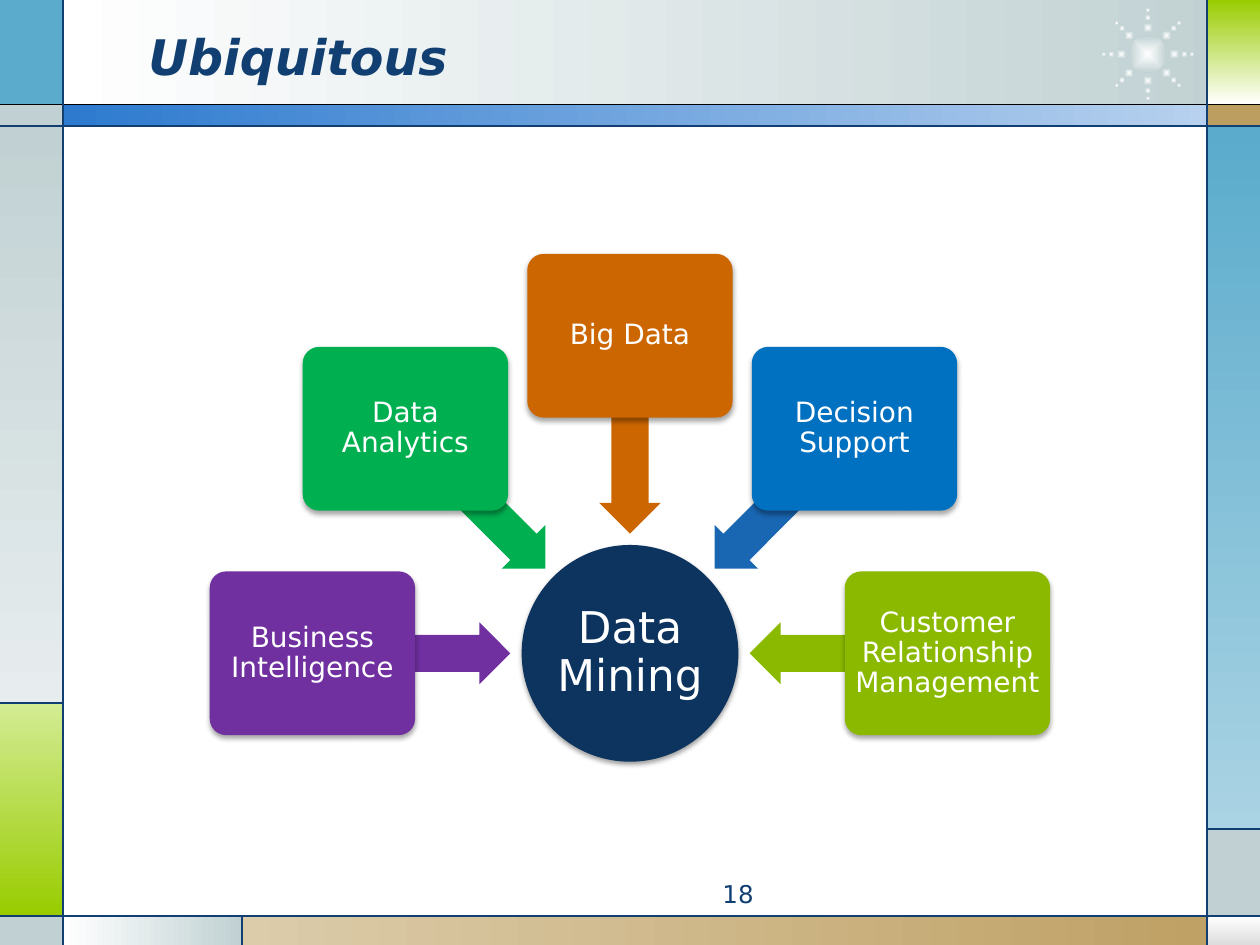
from dataclasses import dataclass
from itertools import product
from math import cos, radians, sin

from lxml import etree
from pptx import Presentation
from pptx.dml.color import RGBColor
from pptx.enum import shapes, text
from pptx.oxml import ns
from pptx.util import Inches, Pt

COLUMNS, ROWS = 100, 75
FONT = "DejaVu Sans"
NAVY, WHITE, MIST = "113F71", "FFFFFF", "C1D1D3"
SKY, LIME, SAND = "5AABCC", "99CC00", "BD9E61"
ACROSS, DOWN, RADIAL = 0, 90, None
KIND = shapes.MSO_SHAPE

deck = Presentation()
deck.slide_width, deck.slide_height = Inches(10), Inches(7.5)
page = deck.slides.add_slide(deck.slide_layouts[6])


@dataclass(frozen=True)
class Gradient:
    start: str
    end: str
    angle: int | None


@dataclass(frozen=True)
class Area:
    left: float
    top: float
    width: float
    height: float


@dataclass(frozen=True)
class Panel:
    area: Area
    fill: str | Gradient


@dataclass(frozen=True)
class Rule:
    start: tuple[float, float]
    end: tuple[float, float]
    color: str = NAVY


@dataclass(frozen=True)
class Topic:
    label: str
    fill: str
    arrow_fill: str


def across(columns: float) -> int:
    return round(deck.slide_width * columns / COLUMNS)


def down(rows: float) -> int:
    return round(deck.slide_height * rows / ROWS)


def color(value: str) -> RGBColor:
    return RGBColor.from_string(value)


def centred(x: float, y: float, width: float, height: float) -> Area:
    return Area(x - width / 2, y - height / 2, width, height)


def child(parent, tag: str, **attributes):
    values = {name: str(value) for name, value in attributes.items()}
    return etree.SubElement(parent, ns.qn(tag), values)


def apply_gradient(shape, gradient: Gradient) -> None:
    shape.fill.background()
    blank = shape._element.spPr.find(ns.qn("a:noFill"))
    fill = etree.Element(ns.qn("a:gradFill"), rotWithShape="1")
    stops = child(fill, "a:gsLst")
    for position, value in ((0, gradient.start), (100000, gradient.end)):
        child(child(stops, "a:gs", pos=position), "a:srgbClr", val=value)
    if gradient.angle is RADIAL:
        target = child(fill, "a:path", path="shape")
        child(target, "a:fillToRect", l=50000, t=50000, r=50000, b=50000)
    else:
        child(fill, "a:lin", ang=gradient.angle * 60000, scaled=0)
    blank.getparent().replace(blank, fill)


def add_figure(kind: KIND, area: Area, fill: str | Gradient):
    shape = page.shapes.add_shape(kind, across(area.left), down(area.top),
                                  across(area.width), down(area.height))
    shape.shadow.inherit = False
    shape.line.fill.background()
    if isinstance(fill, Gradient):
        apply_gradient(shape, fill)
    else:
        shape.fill.solid()
        shape.fill.fore_color.rgb = color(fill)
    return shape


def add_shadow(shape, opacity: int, distance: float) -> None:
    effects = shape._element.spPr.find(ns.qn("a:effectLst"))
    shadow = child(effects, "a:outerShdw", blurRad=Pt(3.1), dist=Pt(distance),
                   dir=90 * 60000, rotWithShape=0)
    child(child(shadow, "a:srgbClr", val="000000"), "a:alpha", val=opacity * 1000)


def write(box, words: str, size: int, ink: str, align: text.PP_ALIGN):
    box.text_frame.word_wrap = True
    para = box.text_frame.paragraphs[0]
    para.text = words
    para.alignment = align
    para.font.name, para.font.size = FONT, Pt(size)
    para.font.color.rgb = color(ink)
    return para


def add_text(area: Area, words: str, size: int, align: text.PP_ALIGN):
    box = page.shapes.add_textbox(across(area.left), down(area.top),
                                  across(area.width), down(area.height))
    return box, write(box, words, size, NAVY, align)


def add_label(shape, words: str, size: int, inset: float) -> None:
    frame = shape.text_frame
    frame.margin_left = frame.margin_right = across(inset)
    frame.margin_top = frame.margin_bottom = down(inset)
    frame.vertical_anchor = text.MSO_ANCHOR.MIDDLE
    write(shape, words, size, WHITE, text.PP_ALIGN.CENTER).line_spacing = 0.9


def add_rule(rule: Rule) -> None:
    line = page.shapes.add_connector(
        shapes.MSO_CONNECTOR.STRAIGHT, across(rule.start[0]), down(rule.start[1]),
        across(rule.end[0]), down(rule.end[1]))
    line.line.color.rgb = color(rule.color)
    line.line.width = Pt(0.75)
    child(line._element.spPr, "a:effectLst")


def add_star(x: float, y: float) -> None:
    glow = Gradient(WHITE, MIST, RADIAL)
    add_figure(KIND.OVAL, centred(x, y, 3, 3), glow)
    dots = ((2.1, 0.75), (2.9, 0.5), (3.5, 0.35))
    for angle, (reach, size) in product(range(0, 360, 45), dots):
        turn = radians(angle)
        spot = centred(x + reach * cos(turn), y + reach * sin(turn), size, size)
        add_figure(KIND.OVAL, spot, glow)


def add_topic(topic: Topic, angle: int, x: float, y: float) -> None:
    dx, dy = cos(radians(angle)), sin(radians(angle))
    arrow = add_figure(KIND.LEFT_ARROW,
                       centred(x + 17.35 * dx, y + 17.35 * dy, 15.7, 4.9),
                       topic.arrow_fill)
    arrow.adjustments[0], arrow.adjustments[1] = 0.6, 0.5
    arrow.rotation = angle % 360
    card = add_figure(KIND.ROUNDED_RECTANGLE,
                      centred(x + 25.2 * dx, y + 25.2 * dy, 16.3, 13), topic.fill)
    card.adjustments[0] = 0.1
    add_shadow(card, 35, 1.8)
    add_label(card, topic.label, 16, 0.3)


PANELS = (
    Panel(Area(5, 0, 92.7, 8.4), Gradient(WHITE, MIST, ACROSS)),
    Panel(Area(0, 0, 5, 8.3), SKY),
    Panel(Area(0, 8.3, 5, 1.7), MIST),
    Panel(Area(0, 10, 5, 45.8), Gradient(MIST, "E7EDEE", DOWN)),
    Panel(Area(0, 55.8, 5, 16.9), Gradient("D3EC94", LIME, DOWN)),
    Panel(Area(0, 72.7, 5, 2.3), MIST),
    Panel(Area(5, 72.7, 14.2, 2.3), Gradient(WHITE, MIST, ACROSS)),
    Panel(Area(19.2, 72.7, 80.8, 2.3), Gradient("DCCCAA", SAND, ACROSS)),
    Panel(Area(95.9, 72.7, 4.1, 2.3), Gradient(WHITE, "DDDDDD", DOWN)),
    Panel(Area(95.8, 65.8, 4.2, 6.9), MIST),
    Panel(Area(95.8, 10, 4.2, 55.8), Gradient(SKY, "AAD3E4", DOWN)),
    Panel(Area(95.8, 8.3, 4.2, 1.7), SAND),
    Panel(Area(95.8, 0, 4.2, 8.3), Gradient(LIME, WHITE, DOWN)),
    Panel(Area(5, 8.3, 90.8, 1.7), Gradient("2D7ACF", "B7D1EE", ACROSS)),
)

RULES = (
    Rule((0, 8.3), (COLUMNS, 8.3), "000000"),
    Rule((0, 10), (COLUMNS, 10)),
    Rule((0, 72.7), (COLUMNS, 72.7)),
    Rule((5, 0), (5, ROWS)),
    Rule((95.8, 0), (95.8, ROWS)),
    Rule((5, 55.8), (0, 55.8)),
    Rule((19.2, 72.7), (19.2, ROWS)),
    Rule((95.8, 65.8), (COLUMNS, 65.8)),
)

TOPICS = (
    Topic("Business Intelligence", "7030A0", "7030A0"),
    Topic("Data Analytics", "00B050", "00B050"),
    Topic("Big Data", "CC6600", "CC6600"),
    Topic("Decision Support", "0070C0", "1966B3"),
    Topic("Customer Relationship Management", "8AB900", "8AB900"),
)


def main() -> None:
    for panel in PANELS:
        add_figure(KIND.RECTANGLE, panel.area, panel.fill)
    add_star(91.1, 4.3)
    for rule in RULES:
        add_rule(rule)

    title, para = add_text(Area(10.8, 1.3, 73.3, 6.2), "Ubiquitous", 28, text.PP_ALIGN.LEFT)
    title.text_frame.vertical_anchor = text.MSO_ANCHOR.MIDDLE
    para.font.bold = para.font.italic = True
    add_text(Area(37.5, 69.3, 23.3, 2.7), "18", 14, text.PP_ALIGN.RIGHT)

    x, y = 50, 51.85
    hub = add_figure(KIND.OVAL, centred(x, y, 17.2, 17.2), "0D345F")
    add_shadow(hub, 38, 1.6)
    add_label(hub, "Data Mining", 25, 0.2)
    for index, topic in enumerate(TOPICS):
        add_topic(topic, 180 + 45 * index, x, y)

    deck.save("out.pptx")


if __name__ == "__main__":
    main()
